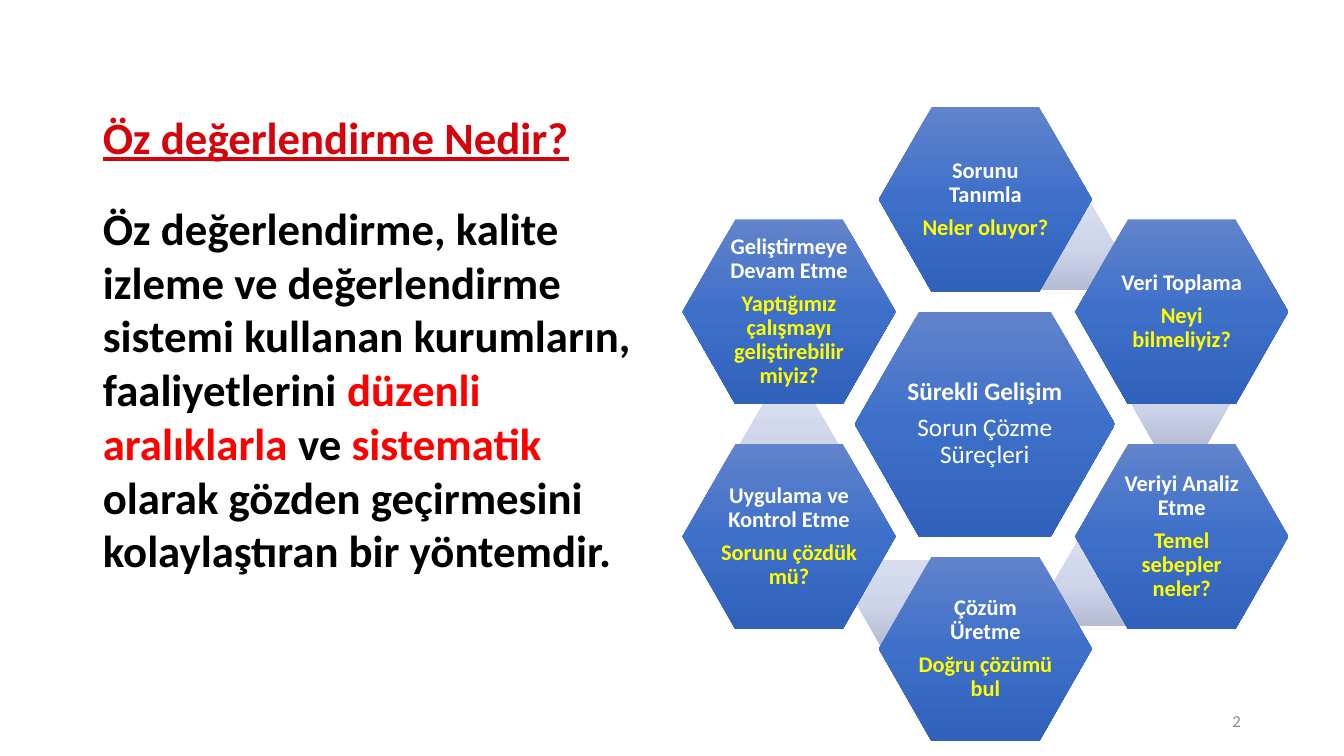
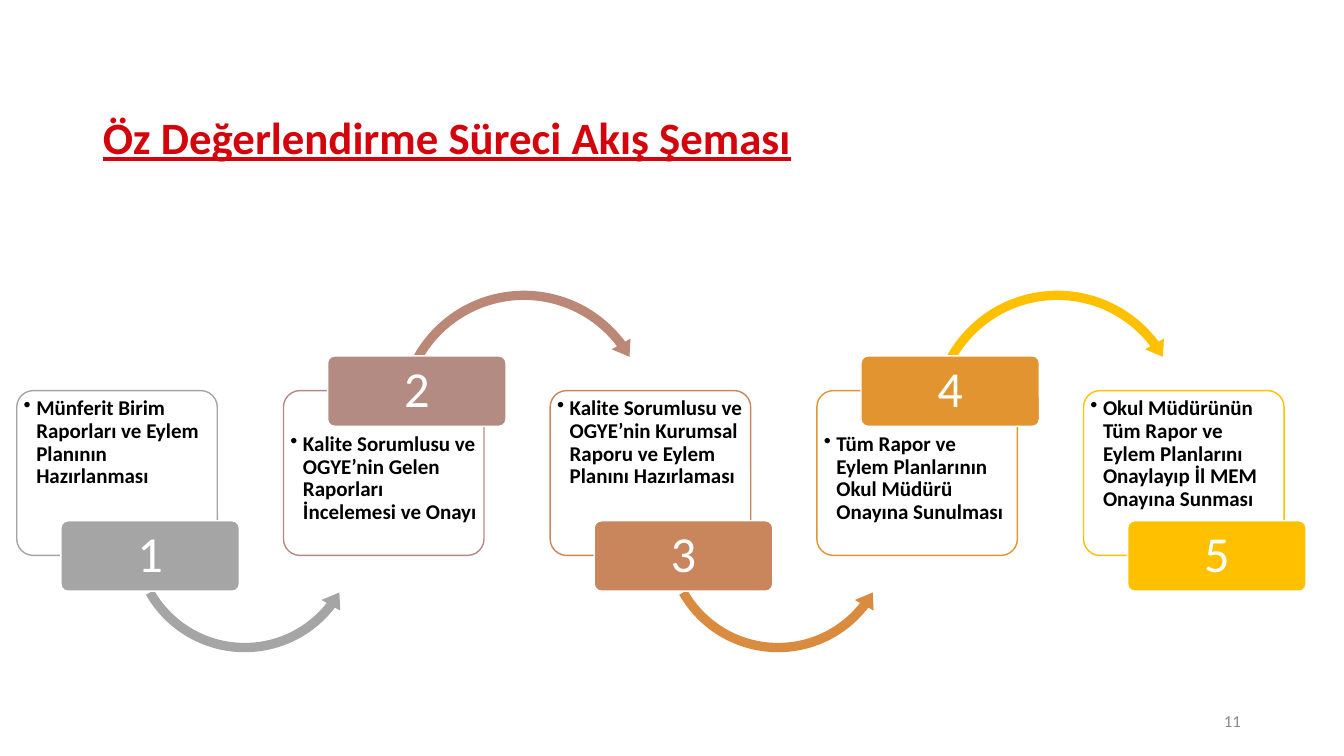
from copy import deepcopy

from pptx import Presentation
from pptx.dml.color import RGBColor
from pptx.enum.shapes import MSO_SHAPE
from pptx.enum.text import MSO_ANCHOR, MSO_AUTO_SIZE, PP_ALIGN
from pptx.oxml.ns import qn
from pptx.util import Pt

HEXAGON = MSO_SHAPE.HEXAGON
ROUNDED = MSO_SHAPE.ROUNDED_RECTANGLE
ARC_OVER = MSO_SHAPE.CIRCULAR_ARROW
ARC_UNDER = MSO_SHAPE.LEFT_CIRCULAR_ARROW
LEFT, CENTER, RIGHT = PP_ALIGN.LEFT, PP_ALIGN.CENTER, PP_ALIGN.RIGHT
TOP, MIDDLE = MSO_ANCHOR.TOP, MSO_ANCHOR.MIDDLE
NO_AUTOFIT = MSO_AUTO_SIZE.NONE

BLACK = RGBColor(0x00, 0x00, 0x00)
WHITE = RGBColor(0xFF, 0xFF, 0xFF)
YELLOW = RGBColor(0xFF, 0xFF, 0x00)
RED = RGBColor(0xFF, 0x00, 0x00)
TITLE_RED = RGBColor(0xD4, 0x04, 0x0C)
PAGE_GREY = RGBColor(0x89, 0x89, 0x89)
GREY = RGBColor(0xA5, 0xA5, 0xA5)
ROSE = RGBColor(0xB4, 0x8B, 0x83)
ROSE_ARC = RGBColor(0xBB, 0x87, 0x76)
COPPER = RGBColor(0xC9, 0x86, 0x5C)
COPPER_ARC = RGBColor(0xD9, 0x8C, 0x3F)
ORANGE = RGBColor(0xE1, 0x94, 0x30)
GOLD = RGBColor(0xFF, 0xC0, 0x00)
BLUES = [RGBColor(0x61, 0x83, 0xCB), RGBColor(0x3E, 0x70, 0xCA), RGBColor(0x30, 0x62, 0xBB)]
PALES = [RGBColor(0xD8, 0xDD, 0xEE), RGBColor(0xCE, 0xD5, 0xEB), RGBColor(0xB5, 0xBC, 0xD3)]


class Deck:
    """Holds the shared style and the slide being built."""

    FONT = "Calibri"
    PX = 9525

    def __init__(self):
        self.file = Presentation()
        self.file.slide_width, self.file.slide_height = self.emu(1280, 720)
        self.slide = None

    def emu(self, *lengths):
        return [length * self.PX for length in lengths]

    def place(self, shape, *box):
        shape.left, shape.top, shape.width, shape.height = self.emu(*box)

    def frame(self, shape, anchor, margins):
        text = shape.text_frame
        text.word_wrap = True
        text.auto_size = NO_AUTOFIT
        text.vertical_anchor = anchor
        (text.margin_left, text.margin_top,
         text.margin_right, text.margin_bottom) = self.emu(*margins)
        return text

    def style(self, paragraph, size, color, bold=False, align=LEFT, spacing=0.9, after=0):
        paragraph.alignment = align
        paragraph.line_spacing = spacing
        paragraph.space_before, paragraph.space_after = Pt(0), Pt(after)
        font = paragraph.font
        font.name, font.size, font.bold = self.FONT, Pt(size), bold
        font.color.rgb = color

    def bullet(self, paragraph, mark, indent):
        properties = paragraph._p.get_or_add_pPr()
        properties.set("marL", str(indent * self.PX))
        properties.set("indent", str(-indent * self.PX))
        if mark:
            properties.makeelement(qn("a:buChar"), {"char": mark})
            properties.append(properties.makeelement(qn("a:buChar"), {"char": mark}))
        else:
            properties.append(properties.makeelement(qn("a:buNone"), {}))

    def start(self, layout, title, number):
        self.slide = self.file.slides.add_slide(self.file.slide_layouts.get_by_name(layout))
        heading = self.slide.shapes.title
        self.place(heading, 88, 93, 1192, 81)
        paragraph = self.frame(heading, MIDDLE, (10, 5, 10, 5)).paragraphs[0]
        paragraph.text = title
        self.style(paragraph, 32, TITLE_RED, bold=True)
        paragraph.font.underline = True
        page = self.slide.shapes.add_textbox(*self.emu(904, 667, 288, 38))
        paragraph = self.frame(page, MIDDLE, (10, 5, 10, 5)).paragraphs[0]
        paragraph.text = number
        self.style(paragraph, 12, PAGE_GREY, align=RIGHT, spacing=1)

    def body(self, box, pieces):
        body = self.slide.placeholders[1]
        self.place(body, *box)
        paragraph = self.frame(body, TOP, (10, 5, 10, 5)).paragraphs[0]
        self.bullet(paragraph, None, 0)
        self.style(paragraph, 32, BLACK, bold=True, spacing=1)
        for words, color in pieces:
            run = paragraph.add_run()
            run.text = words
            run.font.color.rgb = color

    def shape(self, kind, box, adjustments, fill=None, line=None):
        shape = self.slide.shapes.add_shape(kind, *self.emu(*box))
        shape.shadow.inherit = False
        for index, value in enumerate(adjustments):
            shape.adjustments[index] = value
        if fill is not None:
            shape.fill.solid()
            shape.fill.fore_color.rgb = fill
        if line is None:
            shape.line.fill.background()
        else:
            shape.line.color.rgb = line
            shape.line.width = Pt(1)
        return shape

    def hexagon(self, center, size, shades, lines=()):
        (x, y), (width, height) = center, size
        hexagon = self.shape(HEXAGON, (x - width // 2, y - height // 2, width, height), [0.286])
        hexagon.fill.gradient()
        hexagon.fill.gradient_angle = 270
        stops = hexagon._element.spPr.find(".//" + qn("a:gsLst"))
        stops.insert(1, deepcopy(stops[0]))
        for stop, shade, position in zip(hexagon.fill.gradient_stops, shades, (0, 0.5, 1)):
            stop.color.rgb = shade
            stop.position = position
        text = self.frame(hexagon, MIDDLE, (2, 2, 2, 2))
        for index, (words, points, color, bold) in enumerate(lines):
            paragraph = text.add_paragraph() if index else text.paragraphs[0]
            paragraph.text = words
            self.style(paragraph, points, color, bold, CENTER, after=6)

    def card(self, box, words, color, top_margin):
        card = self.shape(ROUNDED, box, [0.1], WHITE, color)
        paragraph = self.frame(card, TOP, (2, top_margin, 2, 2)).paragraphs[0]
        paragraph.text = words
        self.style(paragraph, 15, BLACK, bold=True)
        self.bullet(paragraph, "•", 12)
        properties = paragraph._p.pPr
        properties.append(properties.find(qn("a:defRPr")))

    def badge(self, box, number, color):
        badge = self.shape(ROUNDED, box, [0.1], color, WHITE)
        paragraph = self.frame(badge, MIDDLE, (7, 5, 7, 5)).paragraphs[0]
        paragraph.text = str(number)
        self.style(paragraph, 36, WHITE, align=CENTER)


def build_definition(deck):
    deck.start("Title and Content", "Öz değerlendirme Nedir?", "2")
    deck.body((88, 186, 554, 371), [
        ("Öz değerlendirme, kalite izleme ve değerlendirme sistemi kullanan kurumların, "
         "faaliyetlerini ", BLACK),
        ("düzenli aralıklarla", RED),
        (" ve ", BLACK),
        ("sistematik", RED),
        (" olarak gözden geçirmesini kolaylaştıran bir yöntemdir.", BLACK),
    ])
    x, y = 938, 404
    side, half, full = 187, 107, 214
    deck.hexagon((x, y), (248, 214), BLUES, [
        ("Sürekli Gelişim", 18, WHITE, True),
        ("Sorun Çözme Süreçleri", 18, WHITE, False),
    ])
    for link_center in [(1016, 235), (1124, 385), (1049, 555), (861, 573), (751, 422)]:
        deck.hexagon(link_center, (93, 81), PALES)
    steps = [
        (0, -full, "Sorunu Tanımla", "Neler oluyor?"),
        (side, -half, "Veri Toplama", "Neyi bilmeliyiz?"),
        (side, half, "Veriyi Analiz Etme", "Temel sebepler neler?"),
        (0, full, "Çözüm Üretme", "Doğru çözümü bul"),
        (-side, half, "Uygulama ve Kontrol Etme", "Sorunu çözdük mü?"),
        (-side, -half, "Geliştirmeye Devam Etme", "Yaptığımız çalışmayı geliştirebilir miyiz?"),
    ]
    for dx, dy, step, question in steps:
        deck.hexagon((x + dx, y + dy), (203, 176), BLUES, [
            (step, 16, WHITE, True),
            (question, 16, YELLOW, True),
        ])


def build_flow(deck):
    deck.start("Title Only", "Öz Değerlendirme Süreci Akış Şeması", "11")
    stages = [
        ("Münferit Birim Raporları ve Eylem Planının Hazırlanması", GREY, GREY),
        ("Kalite Sorumlusu ve OGYE’nin Gelen Raporları İncelemesi ve Onayı", ROSE, ROSE_ARC),
        ("Kalite Sorumlusu ve OGYE’nin Kurumsal Raporu ve Eylem Planını Hazırlaması",
         COPPER, COPPER_ARC),
        ("Tüm Rapor ve Eylem Planlarının Okul Müdürü Onayına Sunulması", ORANGE, GOLD),
        ("Okul Müdürünün Tüm Rapor ve Eylem Planlarını Onaylayıp İl MEM Onayına Sunması",
         GOLD, None),
    ]
    under = (ARC_UNDER, 399, 228, [0.039, 4.865, 22.62, 90.245, 0.045], 2, 496)
    over = (ARC_OVER, 271, 252, [0.035, 4.354, 193.891, 125.755, 0.041], 36, 339)
    for index, (words, color, arc_color) in enumerate(stages):
        arc, arc_top, arc_size, arc_bend, text_top, badge_top = over if index % 2 else under
        left = 16 + 254 * index
        deck.card((left, 372, 191, 157), words, color, text_top)
        if arc_color is not None:
            deck.shape(arc, (left + 103, arc_top, arc_size, arc_size), arc_bend, arc_color)
        deck.badge((left + 42, badge_top, 170, 67), index + 1, color)


def main():
    deck = Deck()
    build_definition(deck)
    build_flow(deck)
    deck.file.save("out.pptx")


if __name__ == "__main__":
    main()
